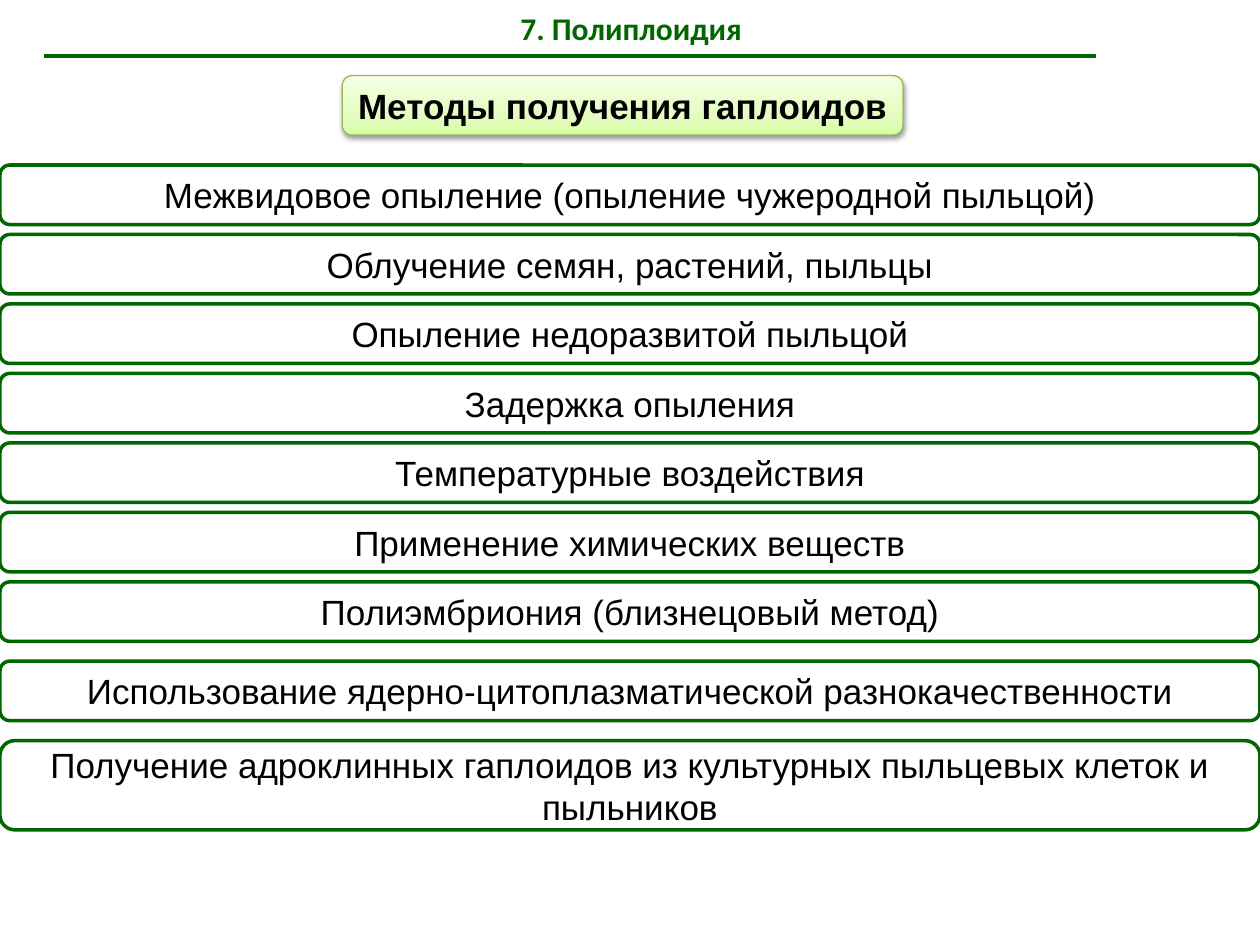
from copy import deepcopy

from lxml import etree
from pptx import Presentation
from pptx.dml.color import RGBColor
from pptx.enum import shapes, text
from pptx.oxml import ns, parse_xml
from pptx.util import Pt

GREEN = "006600"
BLACK = "000000"

METHODS = [
    "Межвидовое опыление (опыление чужеродной пыльцой)",
    "Облучение семян, растений, пыльцы",
    "Опыление недоразвитой пыльцой",
    "Задержка опыления",
    "Температурные воздействия",
    "Применение химических веществ",
    "Полиэмбриония (близнецовый метод)",
]
CYTOPLASM = "Использование ядерно-цитоплазматической разнокачественности"
CULTURE = "Получение адроклинных гаплоидов из культурных пыльцевых клеток и пыльников"

ROW_TOP, ROW_STEP, ROW_HEIGHT = 94.3, 39.7, 34


def colour(value):
    return RGBColor.from_string(value)


def place(shape, left, top, width, height):
    shape.left, shape.top = Pt(left), Pt(top)
    shape.width, shape.height = Pt(width), Pt(height)


def write(shape, words, font, size, ink, bold=False):
    frame = shape.text_frame
    frame.text = words
    frame.word_wrap = True
    frame.auto_size = text.MSO_AUTO_SIZE.NONE
    frame.vertical_anchor = text.MSO_ANCHOR.MIDDLE
    paragraph = frame.paragraphs[0]
    paragraph.alignment = text.PP_ALIGN.CENTER
    paragraph.font.name, paragraph.font.size = font, Pt(size)
    paragraph.font.bold = bold
    paragraph.font.color.rgb = colour(ink)


def add_title(page, words):
    title = page.shapes.title
    place(title, 36.7, 0, 648, 31.7)
    write(title, words, "Calibri", 18, GREEN, bold=True)


def add_rule(page, left, right, top):
    rule = page.shapes.add_connector(
        shapes.MSO_CONNECTOR.STRAIGHT, Pt(left), Pt(top), Pt(right), Pt(top))
    rule.line.color.rgb = colour(GREEN)
    rule.line.width = Pt(2)
    etree.SubElement(rule._element.spPr, ns.qn("a:effectLst"))


def add_box(page, words, left, top, width, height,
            edge=GREEN, weight=2, fill=None, bold=False):
    box = page.shapes.add_shape(
        shapes.MSO_SHAPE.ROUNDED_RECTANGLE,
        Pt(left), Pt(top), Pt(width), Pt(height))
    box.shadow.inherit = False
    box.line.color.rgb = colour(edge)
    box.line.width = Pt(weight)
    if fill:
        box.fill.solid()
        box.fill.fore_color.rgb = colour(fill)
    else:
        box.fill.background()
    write(box, words, "Arial", 20, BLACK, bold)
    return box


def shade(box, stops):
    """Fill upwards with three (position, colour) stops."""
    box.fill.gradient()
    box.fill.gradient_angle = 90
    stop_list = box._element.spPr.find(".//" + ns.qn("a:gsLst"))
    stop_list.insert(1, deepcopy(stop_list[0]))
    for stop, (position, value) in zip(box.fill.gradient_stops, stops):
        stop.position = position
        stop.color.rgb = colour(value)


def drop_shadow(box):
    effects = box._element.spPr.find(ns.qn("a:effectLst"))
    effects.append(parse_xml(
        f'<a:outerShdw {ns.nsdecls("a")} blurRad="{Pt(3.1)}" dist="{Pt(1.6)}"'
        ' dir="5400000" rotWithShape="0">'
        f'<a:srgbClr val="{BLACK}"><a:alpha val="38000"/></a:srgbClr>'
        '</a:outerShdw>'))


def main():
    deck = Presentation()
    deck.slide_width, deck.slide_height = Pt(720), Pt(540)
    page = deck.slides.add_slide(deck.slide_layouts[5])

    # Heading and its rule
    add_title(page, "7. Полиплоидия")
    add_rule(page, 25.2, 626.4, 31.9)

    # Shaded banner
    banner = add_box(page, "Методы получения гаплоидов", 195.6, 43.2, 320.4, 34,
                     edge="98B955", weight=0.75, bold=True)
    shade(banner, [(0, "DAFDA7"), (0.35, "E4FCC2"), (1, "F5FFE7")])
    drop_shadow(banner)

    # Evenly spaced methods, then two set further apart
    for index, method in enumerate(METHODS):
        add_box(page, method, 0, ROW_TOP + index * ROW_STEP, 720, ROW_HEIGHT)
    add_box(page, CYTOPLASM, 0, 377.8, 720, ROW_HEIGHT)
    add_box(page, CULTURE, 0, 423.2, 720, 51, fill="FFFFFF")

    deck.save("out.pptx")


if __name__ == "__main__":
    main()
